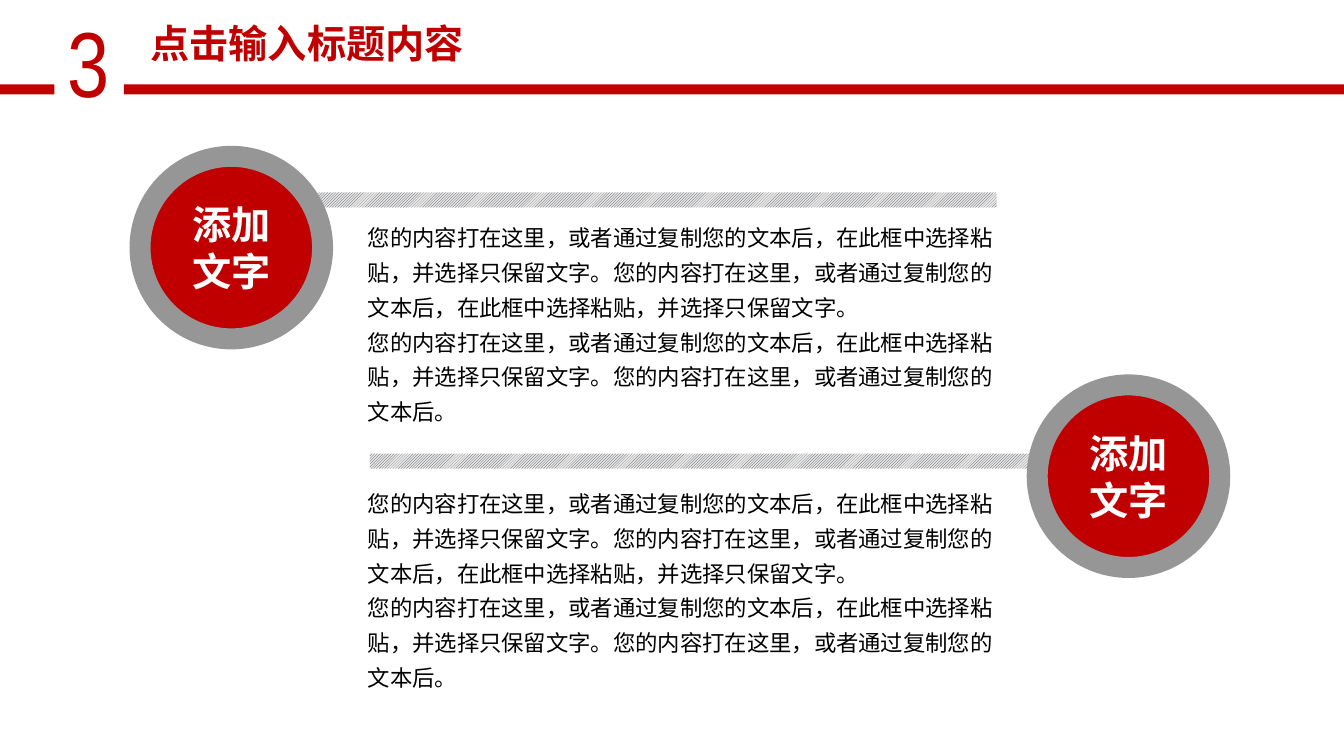
"""Build a section slide with two labelled circles and their text blocks."""
from pptx import Presentation
from pptx.dml.color import RGBColor
from pptx.enum.dml import MSO_PATTERN
from pptx.enum.shapes import MSO_SHAPE as SHAPE
from pptx.enum.text import MSO_ANCHOR as ANCHOR, PP_ALIGN as ALIGN
from pptx.oxml.ns import qn
from pptx.util import Cm, Pt

COLORS = {"red": "C00000", "gray": "969696", "hatch": "414455",
          "pale": "E8E8E6", "white": "FFFFFF", "black": "000000"}
CJK = "Noto Sans CJK SC"
LEAD = "您的内容打在这里，或者通过复制您的文本后，在此框中选择粘贴，并选择只保留文字。"
BODY = f"{LEAD}{LEAD}\n{LEAD}您的内容打在这里，或者通过复制您的文本后。"

prs = Presentation()
prs.slide_width, prs.slide_height = Cm(33.87), Cm(19.05)
s = prs.slides.add_slide(prs.slide_layouts[6])


def add_shape(kind, left, top, width, height):
    sp = s.shapes.add_shape(kind, Cm(left), Cm(top), Cm(width), Cm(height))
    sp.shadow.inherit = False
    sp.line.fill.background()
    sp.fill.solid()
    sp.fill.fore_color.rgb = RGBColor.from_string(COLORS["red"])
    return sp


def set_text(sp, text, size, color, font=CJK, bold=False, align=ALIGN.LEFT,
             spacing=1.0, margins=(0.25, 0.13)):
    tf = sp.text_frame
    tf.word_wrap = True
    tf.margin_left = tf.margin_right = Cm(margins[0])
    tf.margin_top = tf.margin_bottom = Cm(margins[1])
    tf.text = text
    for p in tf.paragraphs:
        p.alignment = align
        p.line_spacing = spacing
        for r in p.runs:
            r.font.size = Pt(size)
            r.font.bold = bold
            r.font.name = font
            r.font.color.rgb = RGBColor.from_string(COLORS[color])
            ea = r.font._element.makeelement(qn("a:ea"), {"typeface": font})
            r.font._element.find(qn("a:latin")).addnext(ea)


number = s.shapes.add_textbox(Cm(1.45), Cm(0), Cm(0.86), Cm(3.07))
set_text(number, "3", 66, "red", font="Arial Narrow")

for left, width in ((3.12, 30.75), (-0.08, 1.45)):
    add_shape(SHAPE.RECTANGLE, left, 2.13, width, 0.25)

for left, top in ((9.32, 11.43), (7.72, 4.85)):
    bar = add_shape(SHAPE.RECTANGLE, left, top, 17.4, 0.38)
    bar.fill.patterned()
    bar.fill.pattern = MSO_PATTERN.LIGHT_UPWARD_DIAGONAL
    bar.fill.fore_color.rgb = RGBColor.from_string(COLORS["hatch"])
    bar.fill.back_color.rgb = RGBColor.from_string(COLORS["pale"])

for left, top, body_top in ((3.53, 3.94, 5.31), (26.14, 9.7, 12.01)):
    circle = add_shape(SHAPE.OVAL, left, top, 4.6, 4.6)
    circle.line.color.rgb = RGBColor.from_string(COLORS["gray"])
    circle.line.width = Pt(15)
    circle.text_frame.vertical_anchor = ANCHOR.MIDDLE
    set_text(circle, "添加文字", 28, "white", bold=True, align=ALIGN.CENTER)
    body = s.shapes.add_textbox(Cm(9.02), Cm(body_top), Cm(16.41), Cm(5.59))
    set_text(body, BODY, 16, "black", spacing=1.3)

title = s.shapes.add_textbox(Cm(3.18), Cm(0.48), Cm(9.12), Cm(1.45))
set_text(title, "点击输入标题内容", 28, "red", bold=True, align=ALIGN.CENTER,
         margins=(0, 0))

prs.save("out.pptx")
